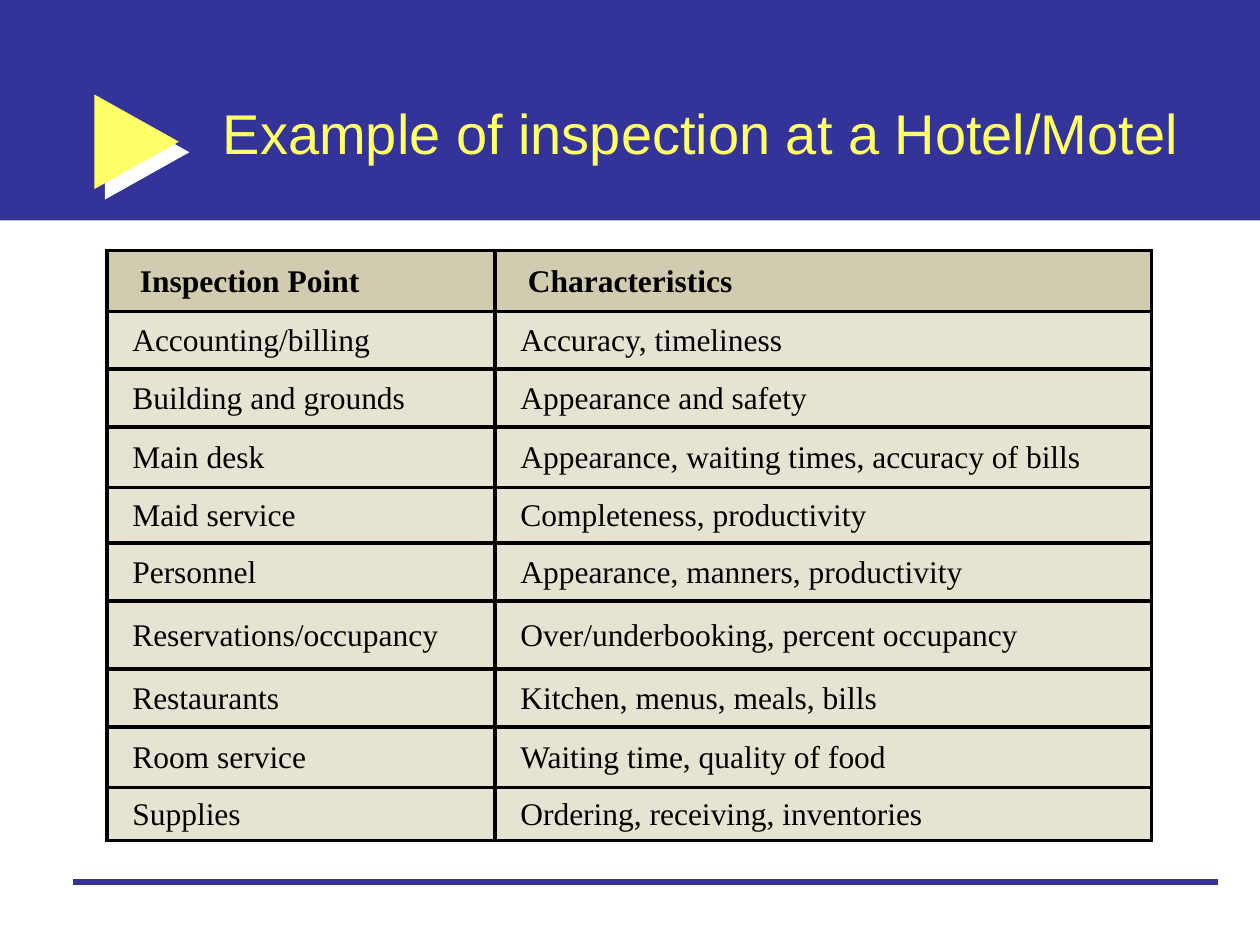
from typing import NamedTuple

from lxml import etree
from pptx import Presentation, util as u
from pptx.dml.color import RGBColor
from pptx.enum import shapes, text
from pptx.oxml import parse_xml
from pptx.oxml.ns import nsdecls, qn

INDIGO = RGBColor(0x33, 0x33, 0x99)
YELLOW = RGBColor(0xFF, 0xFF, 0x66)
BLACK = RGBColor(0, 0, 0)
HEADER_TAN = RGBColor(0xD1, 0xCB, 0xAF)
BODY_TAN = RGBColor(0xE6, 0xE3, 0xD2)

WIDTH, HEIGHT = u.Inches(10), u.Inches(7.5)
TABLE_LEFT, TABLE_TOP = 0.85, 1.99
COLUMN_WIDTHS = (3.08, 5.21)


class Inspection(NamedTuple):
    point: str
    characteristics: str
    height: float


HEADER = Inspection("Inspection Point", "Characteristics", 0.48)
INSPECTIONS = (
    Inspection("Accounting/billing", "Accuracy, timeliness", 0.46),
    Inspection("Building and grounds", "Appearance and safety", 0.46),
    Inspection("Main desk", "Appearance, waiting times, accuracy of bills", 0.48),
    Inspection("Maid service", "Completeness, productivity", 0.44),
    Inspection("Personnel", "Appearance, manners, productivity", 0.46),
    Inspection("Reservations/occupancy", "Over/underbooking, percent occupancy", 0.54),
    Inspection("Restaurants", "Kitchen, menus, meals, bills", 0.46),
    Inspection("Room service", "Waiting time, quality of food", 0.48),
    Inspection("Supplies", "Ordering, receiving, inventories", 0.42),
)


def set_all(target, values: dict) -> None:
    for name, value in values.items():
        setattr(target, name, value)


def write(paragraph, words: str, color: RGBColor, **font_format) -> None:
    run = paragraph.add_run()
    run.text = words
    set_all(run.font, font_format)
    run.font.color.rgb = color


def add_solid(slide, kind, left, top, width, height, color: RGBColor):
    solid = slide.shapes.add_shape(kind, left, top, width, height)
    solid.shadow.inherit = False
    solid.fill.solid()
    solid.fill.fore_color.rgb = color
    solid.line.fill.background()
    return solid


def add_title_marker(slide) -> None:
    """Draw an arrow that is all head, with a hard white shadow."""
    marker = add_solid(slide, shapes.MSO_SHAPE.RIGHT_ARROW, u.Inches(0.75), u.Inches(0.75),
                       u.Inches(0.67), u.Inches(0.75), YELLOW)
    marker.adjustments[0], marker.adjustments[1] = 0.384, 1
    effects = marker._element.spPr.find(qn("a:effectLst"))
    effects.append(parse_xml(
        f'<a:outerShdw {nsdecls("a")} dist="{u.Pt(8.5)}" dir="2700000" algn="ctr" '
        'rotWithShape="0"><a:srgbClr val="FFFFFF"/></a:outerShdw>'))


def add_title(slide, words: str) -> None:
    frame = slide.shapes.add_textbox(
        u.Inches(1.67), u.Inches(0.42), u.Inches(7.98), u.Inches(1.25)).text_frame
    set_all(frame, {"word_wrap": True, "vertical_anchor": text.MSO_ANCHOR.MIDDLE})
    write(frame.paragraphs[0], words, YELLOW, name="Arial", size=u.Pt(32))


def add_footer_rule(slide) -> None:
    y = u.Inches(7)
    rule = slide.shapes.add_connector(
        shapes.MSO_CONNECTOR.STRAIGHT, u.Inches(0.58), y, u.Inches(9.67), y)
    rule.line.color.rgb = INDIGO
    rule.line.width = u.Pt(3)
    etree.SubElement(rule._element.spPr, qn("a:effectLst"))


def border_cell(cell) -> None:
    properties = cell._tc.get_or_add_tcPr()
    for position, side in enumerate(("lnL", "lnR", "lnT", "lnB")):
        properties.insert(position, parse_xml(
            f'<a:{side} {nsdecls("a")} w="{u.Pt(2.25)}"><a:solidFill>'
            f'<a:srgbClr val="{BLACK}"/></a:solidFill></a:{side}>'))


def fill_cell(cell, words: str, is_header: bool) -> None:
    set_all(cell, {
        "vertical_anchor": text.MSO_ANCHOR.MIDDLE,
        "margin_left": u.Inches(0.26 if is_header else 0.2),
        "margin_right": u.Inches(0.01),
        "margin_top": u.Inches(0.01),
        "margin_bottom": 0,
    })
    cell.fill.solid()
    cell.fill.fore_color.rgb = HEADER_TAN if is_header else BODY_TAN
    write(cell.text_frame.paragraphs[0], words, BLACK,
          name="Times New Roman", size=u.Pt(18), bold=is_header)
    border_cell(cell)


def add_inspection_table(slide) -> None:
    rows = (HEADER, *INSPECTIONS)
    table = slide.shapes.add_table(
        len(rows), len(COLUMN_WIDTHS), u.Inches(TABLE_LEFT), u.Inches(TABLE_TOP),
        u.Inches(sum(COLUMN_WIDTHS)), u.Inches(sum(row.height for row in rows))).table
    table.horz_banding = False
    for column, width in zip(table.columns, COLUMN_WIDTHS):
        column.width = u.Inches(width)
    for index, inspection in enumerate(rows):
        table.rows[index].height = u.Inches(inspection.height)
        for column, words in enumerate((inspection.point, inspection.characteristics)):
            fill_cell(table.cell(index, column), words, index == 0)


def main() -> None:
    deck = Presentation()
    set_all(deck, {"slide_width": WIDTH, "slide_height": HEIGHT})
    slide = deck.slides.add_slide(deck.slide_layouts[6])
    add_solid(slide, shapes.MSO_SHAPE.RECTANGLE, 0, 0, WIDTH, u.Inches(1.75), INDIGO)
    add_title_marker(slide)
    add_footer_rule(slide)
    add_title(slide, "Example of inspection at a Hotel/Motel")
    add_inspection_table(slide)
    deck.save("out.pptx")


if __name__ == "__main__":
    main()
